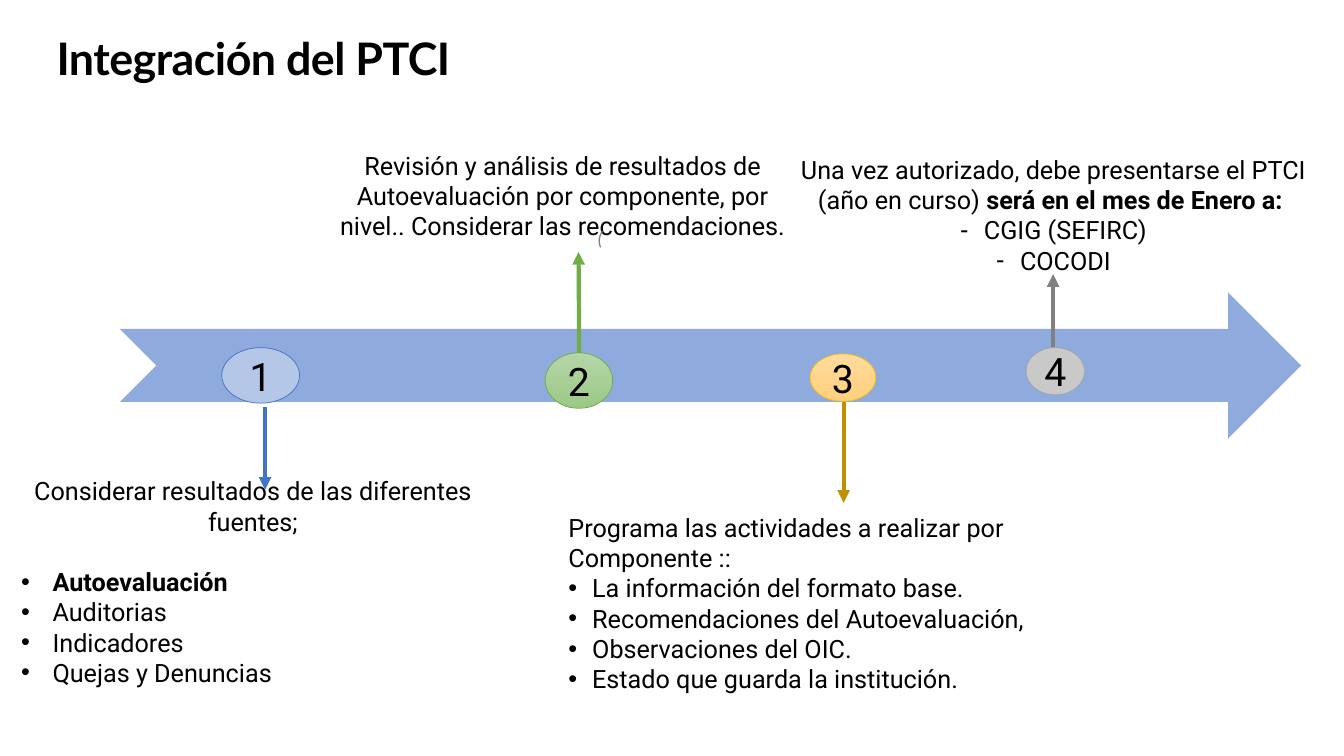
from lxml import etree
from pptx import Presentation
from pptx.dml.color import RGBColor
from pptx.enum.shapes import MSO_CONNECTOR, MSO_SHAPE
from pptx.enum.text import MSO_ANCHOR, MSO_AUTO_SIZE, PP_ALIGN
from pptx.oxml.ns import qn
from pptx.util import Cm, Pt

LEFT, MID = PP_ALIGN.LEFT, PP_ALIGN.CENTER
TOP, CORE = MSO_ANCHOR.TOP, MSO_ANCHOR.MIDDLE
FIXED = MSO_AUTO_SIZE.NONE
OVAL, BAND = MSO_SHAPE.OVAL, MSO_SHAPE.NOTCHED_RIGHT_ARROW
STRAIGHT = MSO_CONNECTOR.STRAIGHT

COLORS = {
    "black": "000000", "band": "8FAADC", "gray": "808080",
    "blue": "4472C4", "green": "70AD47", "ochre": "BF9000",
    "gold": "FFC000", "silver": "A5A5A5", "sky": "B4C7E7", "ash": "C9C9C9",
    "leaf": "B5D5A7", "moss": "9CC987", "cream": "FFDB9E", "sand": "FFD07C",
}
BODY = {"name": "Roboto", "size": Pt(18), "bold": False}
STRONG = {**BODY, "bold": True}
DIGIT = {**BODY, "size": Pt(28)}
HEAD = {"name": "Lato", "size": Pt(32), "bold": True}
MARK = {"name": "Calibri", "size": Pt(14), "italic": True}


def paint(target, color):
    target.rgb = RGBColor.from_string(COLORS[color])


def write(para, text, style, color="black"):
    run = para.add_run()
    run.text = text
    for name, value in style.items():
        setattr(run.font, name, value)
    paint(run.font.color, color)
    return run


deck = Presentation()
deck.slide_width, deck.slide_height = Cm(33.87), Cm(19.05)
slide = deck.slides.add_slide(deck.slide_layouts[4])
shapes = slide.shapes

title = shapes.title
title.left, title.top, title.width, title.height = Cm(1.17), Cm(0.56), Cm(13.89), Cm(1.65)
title.text_frame.vertical_anchor = TOP
title.text_frame.auto_size = FIXED
para = title.text_frame.paragraphs[0]
para.alignment, para.line_spacing, para.space_after = LEFT, 1.07, Pt(6)
run = write(para, "Integración del PTCI", HEAD)
run.font._element.set("spc", "-40")

band = shapes.add_shape(BAND, Cm(3.02), Cm(7.37), Cm(29.77), Cm(3.68))
band.shadow.inherit = False
band.fill.solid()
paint(band.fill.fore_color, "band")
band.line.fill.background()

mark = shapes.add_textbox(Cm(12.47), Cm(5.56), Cm(5.31), Cm(0.86))
mark.text_frame.word_wrap = True
para = mark.text_frame.paragraphs[0]
para.alignment = MID
write(para, "(", MARK, "gray")

steps = [
    (1, (0.28, 11.86, 12.19, 6.43), MID, LEFT, "•", 0.79, 21.6,
     [("Considerar resultados de las diferentes fuentes;", BODY)],
     [("Autoevaluación", STRONG), ("Auditorias", BODY),
      ("Indicadores", BODY), ("Quejas y Denuncias", BODY)]),
    (2, (8.26, 3.66, 11.84, 2.57), MID, MID, "", 0, 0,
     [("Revisión y análisis de resultados de Autoevaluación por componente, "
       "por nivel.. Considerar las recomendaciones.", BODY)], []),
    (3, (14.07, 12.78, 15.5, 4.11), LEFT, LEFT, "•", 0.6, 0,
     [("Programa las actividades a realizar por Componente ::", BODY)],
     [("La información del formato base.", BODY),
      ("Recomendaciones del Autoevaluación,", BODY),
      ("Observaciones del OIC.", BODY),
      ("Estado que guarda la institución.", BODY)]),
    (4, (19.69, 3.76, 13.72, 3.33), MID, MID, "-", 0.6, 0,
     [("Una vez autorizado, debe presentarse el PTCI (año en curso) ", BODY),
      ("será en el mes de Enero a: ", STRONG)],
     [("CGIG (SEFIRC)", BODY), ("COCODI", BODY)]),
]
for index, place, align, side, sign, indent, gap, intro, items in steps:
    box = slide.placeholders[index]
    box.left, box.top, box.width, box.height = map(Cm, place)
    frame = box.text_frame
    frame.word_wrap, frame.auto_size, frame.vertical_anchor = True, FIXED, TOP
    for row, runs in enumerate([intro] + [[item] for item in items]):
        para = frame.add_paragraph() if row else frame.paragraphs[0]
        para.alignment = side if row else align
        para.space_before = Pt(gap if row == 1 else 0)
        props = para._p.get_or_add_pPr()
        shift = Cm(indent) if row else 0
        props.set("marL", str(shift))
        props.set("indent", str(-shift))
        if row:
            etree.SubElement(props, qn("a:buFont")).set("typeface", "Arial")
            etree.SubElement(props, qn("a:buChar")).set("char", sign)
        else:
            etree.SubElement(props, qn("a:buNone"))
        for text, style in runs:
            write(para, text, style)

arrows = [
    (6.68, 10.26, 6.68, 12.34, "blue"),
    (14.6, 9.58, 14.58, 6.35, "green"),
    (21.26, 10.13, 21.26, 12.67, "ochre"),
    (26.54, 9.68, 26.54, 6.91, "gray"),
]
for *ends, color in arrows:
    arrow = shapes.add_connector(STRAIGHT, *map(Cm, ends))
    arrow.line.width = Pt(3)
    paint(arrow.line.color, color)
    etree.SubElement(arrow.line._get_or_add_ln(), qn("a:tailEnd")).set("type", "triangle")
    etree.SubElement(arrow._element.spPr, qn("a:effectLst"))

dots = [
    (5.59, 8.76, 1.96, 1.4, ["sky"], "blue"),
    (13.74, 8.89, 1.7, 1.4, ["leaf", "moss"], "green"),
    (20.42, 8.92, 1.65, 1.19, ["cream", "sand"], "gold"),
    (25.86, 8.76, 1.47, 1.19, ["ash"], "silver"),
]
for number, (*place, tones, edge) in enumerate(dots, 1):
    dot = shapes.add_shape(OVAL, *map(Cm, place))
    dot.shadow.inherit = False
    if len(tones) == 1:
        dot.fill.solid()
        paint(dot.fill.fore_color, tones[0])
    else:
        dot.fill.gradient()
        dot.fill.gradient_angle = 270
        for stop, tone in zip(dot.fill.gradient_stops, tones):
            paint(stop.color, tone)
    dot.line.width = Pt(0.5)
    paint(dot.line.color, edge)
    frame = dot.text_frame
    frame.vertical_anchor = CORE
    for side in ("left", "top", "right", "bottom"):
        setattr(frame, f"margin_{side}", 0)
    frame.paragraphs[0].alignment = MID
    write(frame.paragraphs[0], str(number), DIGIT)

deck.save("out.pptx")
